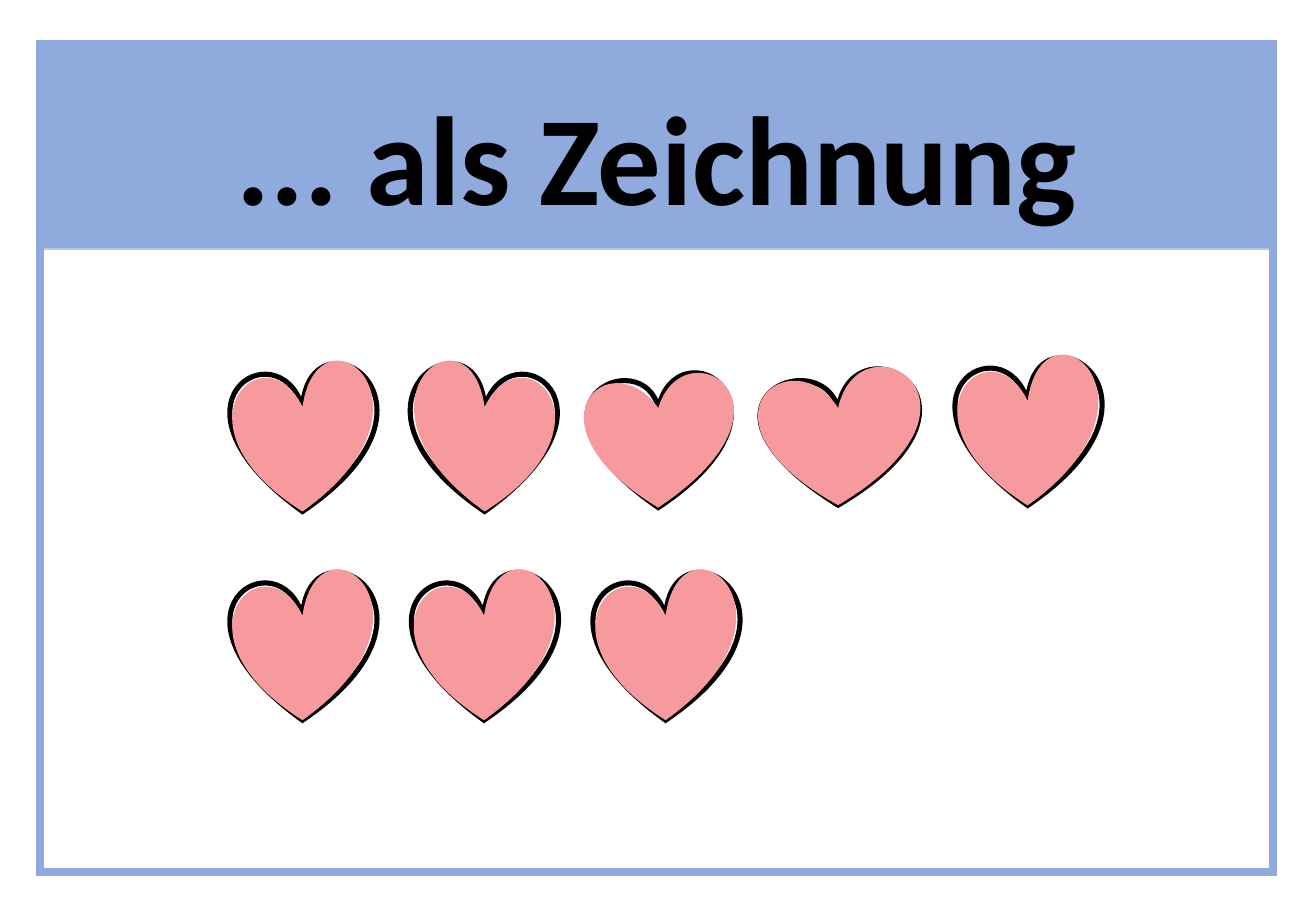
from pptx import Presentation
from pptx.dml.color import RGBColor
from pptx.enum.shapes import MSO_SHAPE as Shape
from pptx.enum.text import MSO_ANCHOR as Anchor, PP_ALIGN as Align
from pptx.oxml.ns import qn
from pptx.util import Pt
from copy import deepcopy
from lxml.etree import SubElement

BLUE = RGBColor(0x8F, 0xAA, 0xDC)
FRAME_BLUE = RGBColor(0x8F, 0xAA, 0xDD)
PALE_BLUE = RGBColor(0xB4, 0xC7, 0xE7)
PINK = RGBColor(0xF7, 0x9A, 0x9E)
BLACK = RGBColor(0, 0, 0)

NOTCH = (0, 0)
CURVE_STEPS = 8
TALL = {
    "outline": [(4.3, -60.5), (97.2, -3.6), (0, 62), (-89.3, -2.2), (-14.4, -46.8)],
    "filling": [(9.4, -65.5), (89.3, -1.4), (0, 62), (-81.4, 10.8), (-22.3, -46.8)],
}
SMALL = {
    "outline": [(11.5, -50.4), (91.4, -1.4), (0, 59), (-90.7, -3.6), (-8.6, -38.9)],
    "filling": [(15.1, -49.7), (92.9, -2.9), (0, 59), (-82.8, 9.4), (-28.8, -40.3)],
}
WIDE = {
    "outline": [(9.4, -54.7), (103.7, -3.6), (0, 57.6), (-98.6, -3.6), (-10.8, -38.9)],
    "filling": [(13, -57.6), (103, -3.6), (0, 57.6), (-92.2, 6.5), (-26.6, -42.5)],
}
TOP_ROW = [
    (TALL, 155.5, 215.3, 1),
    (TALL, 263.5, 215.3, -1),
    (SMALL, 366.4, 216, 1),
    (WIDE, 473, 216, 1),
    (TALL, 585.3, 211.7, 1),
]
BOTTOM_ROW = [(TALL, 155.5 + 107.6 * column, 339, 1) for column in range(3)]


def style(shape, fill=None, line=None, weight=1):
    shape.shadow.inherit = False
    if fill is None:
        shape.fill.background()
    else:
        shape.fill.solid()
        shape.fill.fore_color.rgb = fill
    shape.line.color.rgb = line
    shape.line.width = Pt(weight)
    SubElement(shape.line._get_or_add_ln(), qn("a:miter"), lim="800000")


def curve_points(*controls):
    for step in range(1, CURVE_STEPS + 1):
        t = step / CURVE_STEPS
        weights = ((1 - t) ** 3, 3 * t * (1 - t) ** 2, 3 * t * t * (1 - t), t ** 3)
        yield tuple(
            sum(w * point[axis] for w, point in zip(weights, controls))
            for axis in (0, 1)
        )


def set_curves(contour, controls, side):
    start, close = contour[0], contour[-1]
    origin = start[0]
    notch_x, notch_y = int(origin.get("x")), int(origin.get("y"))
    for segment in contour[1:-1]:
        contour.remove(segment)
    for bend in (controls[:3], [*controls[3:], NOTCH]):
        curve = SubElement(contour, qn("a:cubicBezTo"))
        for dx, dy in bend:
            x, y = notch_x + Pt(side * dx), notch_y + Pt(dy)
            SubElement(curve, qn("a:pt"), x=str(x), y=str(y))
    contour.append(close)


def draw_heart(slide, heart, x, y, side):
    right_top, right_low, tip, left_low, left_top = heart["outline"]
    edge = [
        *curve_points(NOTCH, right_top, right_low, tip),
        *curve_points(tip, left_low, left_top, NOTCH),
    ]
    builder = slide.shapes.build_freeform(Pt(x), Pt(y))
    builder.add_line_segments(
        [(Pt(x + side * dx), Pt(y + dy)) for dx, dy in edge[:-1]], close=True
    )
    shape = builder.convert_to_shape()
    outline = next(shape._element.iter(qn("a:path")))
    set_curves(outline, heart["outline"], side)
    filling = deepcopy(outline)
    outline.addnext(filling)
    set_curves(filling, heart["filling"], side)
    outline.set("fill", "none")
    filling.set("stroke", "0")
    style(shape, PINK, BLACK, 3)


def draw_hearts(slide, left, top):
    for heart, x, y, side in TOP_ROW + BOTTOM_ROW:
        draw_heart(slide, heart, left + x, top + y, side)


def draw_header(slide, left, top, width):
    header = slide.shapes.add_shape(
        Shape.RECTANGLE, Pt(left + 0.7), Pt(top + 0.7), Pt(width - 1.4), Pt(121)
    )
    style(header, BLUE, PALE_BLUE)


def draw_frame(slide, left, top, width, height):
    frame = slide.shapes.add_shape(
        Shape.RECTANGLE, Pt(left), Pt(top), Pt(width), Pt(height)
    )
    style(frame, line=FRAME_BLUE, weight=4.5)


def draw_title(slide, left, top, width):
    title = slide.shapes.add_textbox(
        Pt(left + 15), Pt(top + 17.3), Pt(width - 29.6), Pt(98)
    )
    text_frame = title.text_frame
    text_frame.word_wrap = True
    text_frame.vertical_anchor = Anchor.TOP
    text_frame.text = "... als Zeichnung"
    paragraph = text_frame.paragraphs[0]
    paragraph.alignment = Align.CENTER
    font = paragraph.runs[0].font
    font.name = "Calibri"
    font.size = Pt(75)
    font.bold = True
    font.color.rgb = BLACK


def draw_card(slide, left, top, width, height):
    draw_header(slide, left, top, width)
    draw_hearts(slide, left, top)
    draw_frame(slide, left, top, width, height)
    draw_title(slide, left, top, width)


def main():
    deck = Presentation()
    deck.slide_width = Pt(780)
    deck.slide_height = Pt(540)
    slide = deck.slides.add_slide(deck.slide_layouts[6])
    draw_card(slide, 23.8, 25.9, 730.8, 491)
    deck.save("out.pptx")


if __name__ == "__main__":
    main()
